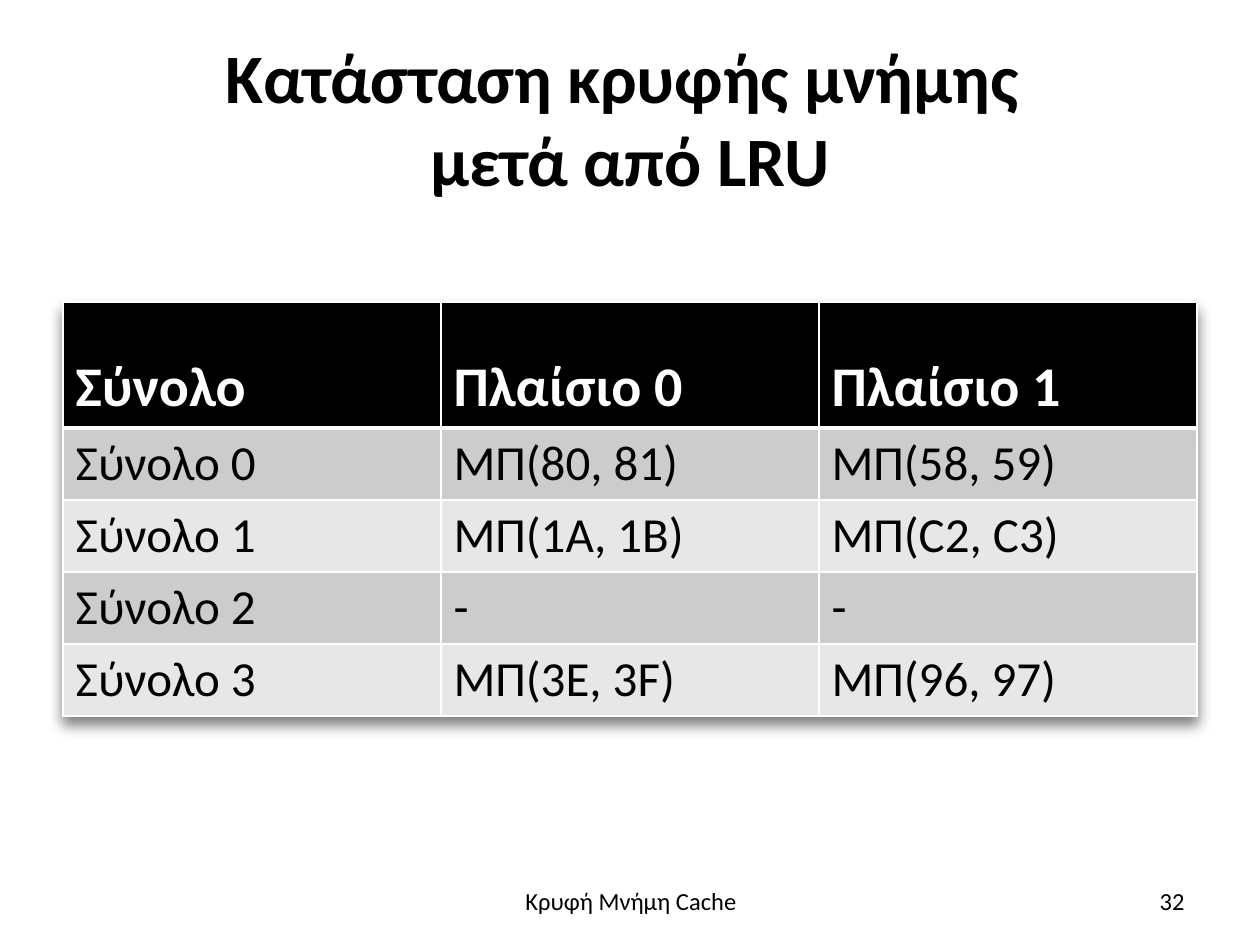
from dataclasses import dataclass

from lxml.etree import SubElement
from pptx import Presentation
from pptx.dml.color import RGBColor
from pptx.enum.text import MSO_ANCHOR as Anchor, PP_ALIGN as Align
from pptx.oxml import parse_xml
from pptx.oxml.ns import nsdecls, qn
from pptx.util import Emu, Pt

PX = 914400 / 126
FONT = "Calibri"
BLACK = RGBColor(0x00, 0x00, 0x00)
WHITE = RGBColor(0xFF, 0xFF, 0xFF)
DARK_BAND = RGBColor(0xCC, 0xCC, 0xCC)
LIGHT_BAND = RGBColor(0xE7, 0xE7, 0xE7)


@dataclass(frozen=True)
class Label:
    text: str
    box: tuple[int, int, int, int]
    size: float
    align: Align
    bold: bool = False


@dataclass(frozen=True)
class RowStyle:
    fill: RGBColor
    color: RGBColor
    size: int
    bold: bool
    anchor: Anchor
    bottom_line: int


LABELS = [
    Label("Κατάσταση κρυφής μνήμης \vμετά από LRU", (63, 38, 1134, 158), 39.6, Align.CENTER, True),
    Label("Κρυφή Μνήμη Cache", (431, 876, 400, 50), 14, Align.CENTER),
    Label("32", (903, 876, 294, 50), 14, Align.RIGHT),
]

CACHE_ROWS = [
    ("Σύνολο", "Πλαίσιο 0", "Πλαίσιο 1"),
    ("Σύνολο 0", "ΜΠ(80, 81)", "ΜΠ(58, 59)"),
    ("Σύνολο 1", "ΜΠ(1Α, 1Β)", "ΜΠ(C2, C3)"),
    ("Σύνολο 2", "-", "-"),
    ("Σύνολο 3", "ΜΠ(3Ε, 3F)", "ΜΠ(96, 97)"),
]
HEADER = RowStyle(BLACK, WHITE, 32, True, Anchor.BOTTOM, 3)
BODY = [RowStyle(fill, BLACK, 28, False, Anchor.TOP, 1) for fill in (DARK_BAND, LIGHT_BAND)]
HEADER_HEIGHT, BODY_HEIGHT, COLUMN_WIDTH = 126, 72, 378


def px(length: int) -> Emu:
    return Emu(round(length * PX))


def format_font(font, size: float, bold: bool, color: RGBColor) -> None:
    for name, value in {"name": FONT, "size": Pt(size), "bold": bold}.items():
        setattr(font, name, value)
    font.color.rgb = color


def add_label(slide, label: Label) -> None:
    frame = slide.shapes.add_textbox(*map(px, label.box)).text_frame
    frame.word_wrap = True
    frame.vertical_anchor = Anchor.MIDDLE
    frame.text = label.text
    paragraph = frame.paragraphs[0]
    paragraph.alignment = label.align
    format_font(paragraph.font, label.size, label.bold, BLACK)
    for run in paragraph.runs:
        format_font(run.font, label.size, label.bold, BLACK)


def add_borders(cell, widths: dict[str, int]) -> None:
    properties = cell._tc.get_or_add_tcPr()
    for index, (side, width) in enumerate(widths.items()):
        line = SubElement(properties, qn(f"a:ln{side}"), w=str(Pt(width)))
        fill = SubElement(line, qn("a:solidFill"))
        SubElement(fill, qn("a:srgbClr"), val=str(WHITE))
        properties.insert(index, line)


def fill_cell(cell, text: str, style: RowStyle, top_line: int) -> None:
    cell.text = text
    cell.vertical_anchor = style.anchor
    cell.fill.solid()
    cell.fill.fore_color.rgb = style.fill
    format_font(cell.text_frame.paragraphs[0].runs[0].font, style.size, style.bold, style.color)
    add_borders(cell, {"L": 1, "R": 1, "T": top_line, "B": style.bottom_line})


def add_cache_table(slide) -> None:
    count = len(CACHE_ROWS)
    height = HEADER_HEIGHT + (count - 1) * BODY_HEIGHT
    box = (63, 302, 3 * COLUMN_WIDTH, height)
    table = slide.shapes.add_table(count, 3, *map(px, box)).table
    for column in table.columns:
        column.width = px(COLUMN_WIDTH)

    top_line = 1
    for index, (row, texts) in enumerate(zip(table.rows, CACHE_ROWS)):
        style = BODY[(index - 1) % 2] if index else HEADER
        row.height = px(BODY_HEIGHT if index else HEADER_HEIGHT)
        for cell, text in zip(row.cells, texts):
            fill_cell(cell, text, style, top_line)
        top_line = style.bottom_line

    # Soft shadow below the table
    table._tbl.tblPr.insert(0, parse_xml(
        f'<a:effectLst {nsdecls("a")}>'
        f'<a:outerShdw blurRad="{Pt(8)}" dist="{Pt(5)}" dir="5400000" algn="t" rotWithShape="0">'
        '<a:srgbClr val="000000"><a:alpha val="50000"/></a:srgbClr>'
        '</a:outerShdw></a:effectLst>'))


def main() -> None:
    presentation = Presentation()
    presentation.slide_width, presentation.slide_height = px(1260), px(945)
    slide = presentation.slides.add_slide(presentation.slide_layouts[6])

    # Title, footer and page number
    for label in LABELS:
        add_label(slide, label)

    # Cache contents by set and frame
    add_cache_table(slide)
    presentation.save("out.pptx")


if __name__ == "__main__":
    main()
